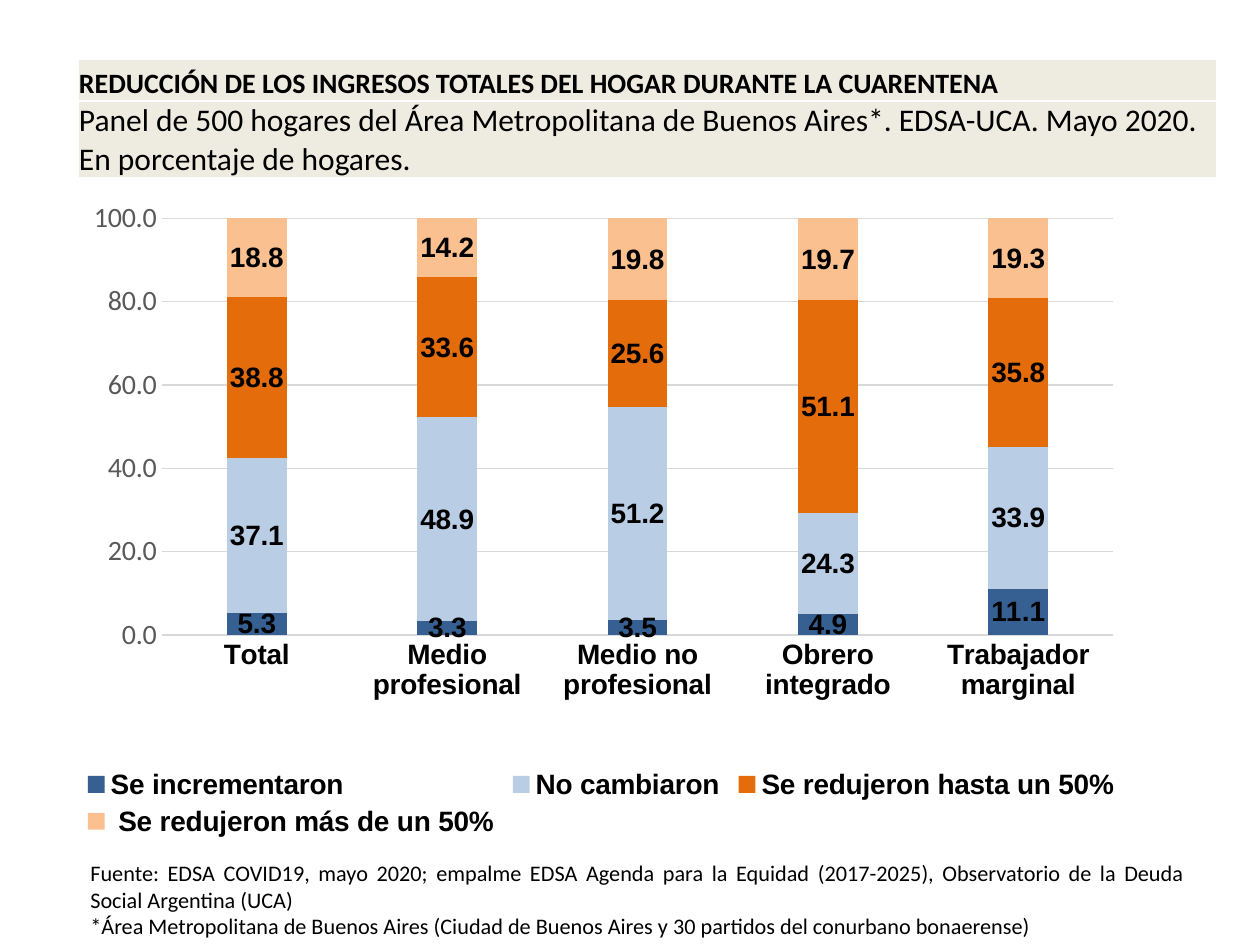
import pptx
import pptx.chart.data
import pptx.dml.color
import pptx.enum.chart
import pptx.enum.text
import pptx.oxml
import pptx.oxml.ns
import pptx.util

PX = 914400 / 126
COLORS = {
    "black": "000000",
    "white": "FFFFFF",
    "band": "EEECE1",
    "grid": "D9D9D9",
    "scale": "595959",
    "increased": "376092",
    "unchanged": "B9CDE5",
    "reduced": "E46C0A",
    "halved": "FAC090",
}


def style_font(font, size, name, color="black", bold=False):
    font.size = pptx.util.Pt(size)
    font.name = name
    font.bold = bold
    font.color.rgb = pptx.dml.color.RGBColor.from_string(COLORS[color])


def place_in_chart(parent, index, x, y, width, height, target=""):
    """Give a plot area or legend a manual layout in fractions of the chart."""
    for old in parent.findall(pptx.oxml.ns.qn("c:layout")):
        parent.remove(old)
    parent.insert(index, pptx.oxml.parse_xml(
        f'<c:layout {pptx.oxml.ns.nsdecls("c")}><c:manualLayout>{target}'
        '<c:xMode val="edge"/><c:yMode val="edge"/>'
        f'<c:x val="{x}"/><c:y val="{y}"/><c:w val="{width}"/><c:h val="{height}"/>'
        '</c:manualLayout></c:layout>'))


deck = pptx.Presentation()
deck.slide_width = round(1260 * PX)
deck.slide_height = round(945 * PX)
page = deck.slides.add_slide(deck.slide_layouts[6])

# Source note
note = page.shapes.add_textbox(*[round(n * PX) for n in (78, 853, 1119, 93)])
note.text_frame.word_wrap = True
note.text_frame.text = (
    "Fuente: EDSA COVID19, mayo 2020; empalme EDSA Agenda para la Equidad (2017-2025), "
    "Observatorio de la Deuda Social Argentina (UCA)\n"
    "*Área Metropolitana de Buenos Aires (Ciudad de Buenos Aires y 30 partidos del "
    "conurbano bonaerense)")
for para in note.text_frame.paragraphs:
    para.alignment = pptx.enum.text.PP_ALIGN.JUSTIFY
    style_font(para.font, 12.7, "Calibri")

# Heading table
headings = [
    ("REDUCCIÓN DE LOS INGRESOS TOTALES DEL HOGAR DURANTE LA CUARENTENA", 42, 16, True),
    ("Panel de 500 hogares del Área Metropolitana de Buenos Aires*. EDSA-UCA. "
     "Mayo 2020. En porcentaje de hogares.", 77, 18, False),
]
table = page.shapes.add_table(
    len(headings), 1, *[round(n * PX) for n in (78, 59, 1139, 119)]).table
for row, (text, height, size, bold) in enumerate(headings):
    table.rows[row].height = round(height * PX)
    cell = table.cell(row, 0)
    cell.text = text
    cell.vertical_anchor = pptx.enum.text.MSO_ANCHOR.BOTTOM
    cell.margin_left = cell.margin_right = cell.margin_top = round(PX)
    cell.margin_bottom = 0
    style_font(cell.text_frame.paragraphs[0].font, size, "Calibri", bold=bold)
    properties = cell._tc.get_or_add_tcPr()
    for side in ("lnL", "lnR", "lnT", "lnB"):
        properties.append(pptx.oxml.parse_xml(
            f'<a:{side} {pptx.oxml.ns.nsdecls("a")} w="12700"><a:solidFill>'
            f'<a:srgbClr val="{COLORS["white"]}"/></a:solidFill></a:{side}>'))
    cell.fill.solid()
    cell.fill.fore_color.rgb = pptx.dml.color.RGBColor.from_string(COLORS["band"])

# Stacked chart of household income changes
income_changes = [
    ("Se incrementaron", "increased", (5.3, 3.3, 3.5, 4.9, 11.1)),
    ("No cambiaron", "unchanged", (37.1, 48.9, 51.2, 24.3, 33.9)),
    ("Se redujeron hasta un 50%", "reduced", (38.8, 33.6, 25.6, 51.1, 35.8)),
    (" Se redujeron más de un 50%", "halved", (18.8, 14.2, 19.8, 19.7, 19.3)),
]
data = pptx.chart.data.CategoryChartData(number_format="0.0")
data.categories = ["Total", "Medio profesional", "Medio no profesional",
                   "Obrero integrado", "Trabajador marginal"]
for name, color, values in income_changes:
    data.add_series(name, values)
chart = page.shapes.add_chart(
    pptx.enum.chart.XL_CHART_TYPE.COLUMN_STACKED,
    *[round(n * PX) for n in (78, 178, 1046, 672)], data).chart
chart.has_title = False
style_font(chart.font, 10, "Calibri")

plot = chart.plots[0]
plot.gap_width = 219
plot.overlap = 100
plot.vary_by_categories = False
for series, (name, color, values) in zip(plot.series, income_changes):
    series.format.fill.solid()
    series.format.fill.fore_color.rgb = pptx.dml.color.RGBColor.from_string(COLORS[color])
    labels = series.data_labels
    labels.show_value = True
    labels.number_format = "0.0"
    labels.number_format_is_linked = False
    style_font(labels.font, 16, "Arial", bold=True)

groups = chart.category_axis
style_font(groups.tick_labels.font, 16, "Arial", bold=True)
percent = chart.value_axis
style_font(percent.tick_labels.font, 16, "Calibri", "scale")
percent.tick_labels.number_format = "0.0"
percent.tick_labels.number_format_is_linked = False
percent.minimum_scale = 0
percent.maximum_scale = 100
percent.major_unit = 20
percent.has_major_gridlines = True
percent.format.line.fill.background()
for axis in (groups, percent):
    axis.major_tick_mark = pptx.enum.chart.XL_TICK_MARK.NONE
    axis.minor_tick_mark = pptx.enum.chart.XL_TICK_MARK.NONE
for line in (groups.format.line, percent.major_gridlines.format.line):
    line.color.rgb = pptx.dml.color.RGBColor.from_string(COLORS["grid"])
    line.width = pptx.util.Pt(0.75)

chart.has_legend = True
legend = chart.legend
legend.position = pptx.enum.chart.XL_LEGEND_POSITION.BOTTOM
legend.include_in_layout = False
style_font(legend.font, 16, "Arial", bold=True)
place_in_chart(legend._element, 1, 0, 0.87, 1, 0.12)
place_in_chart(chart._chartSpace.chart.plotArea, 0, 0.08, 0.06, 0.91, 0.62,
               '<c:layoutTarget val="inner"/>')

deck.save("out.pptx")
